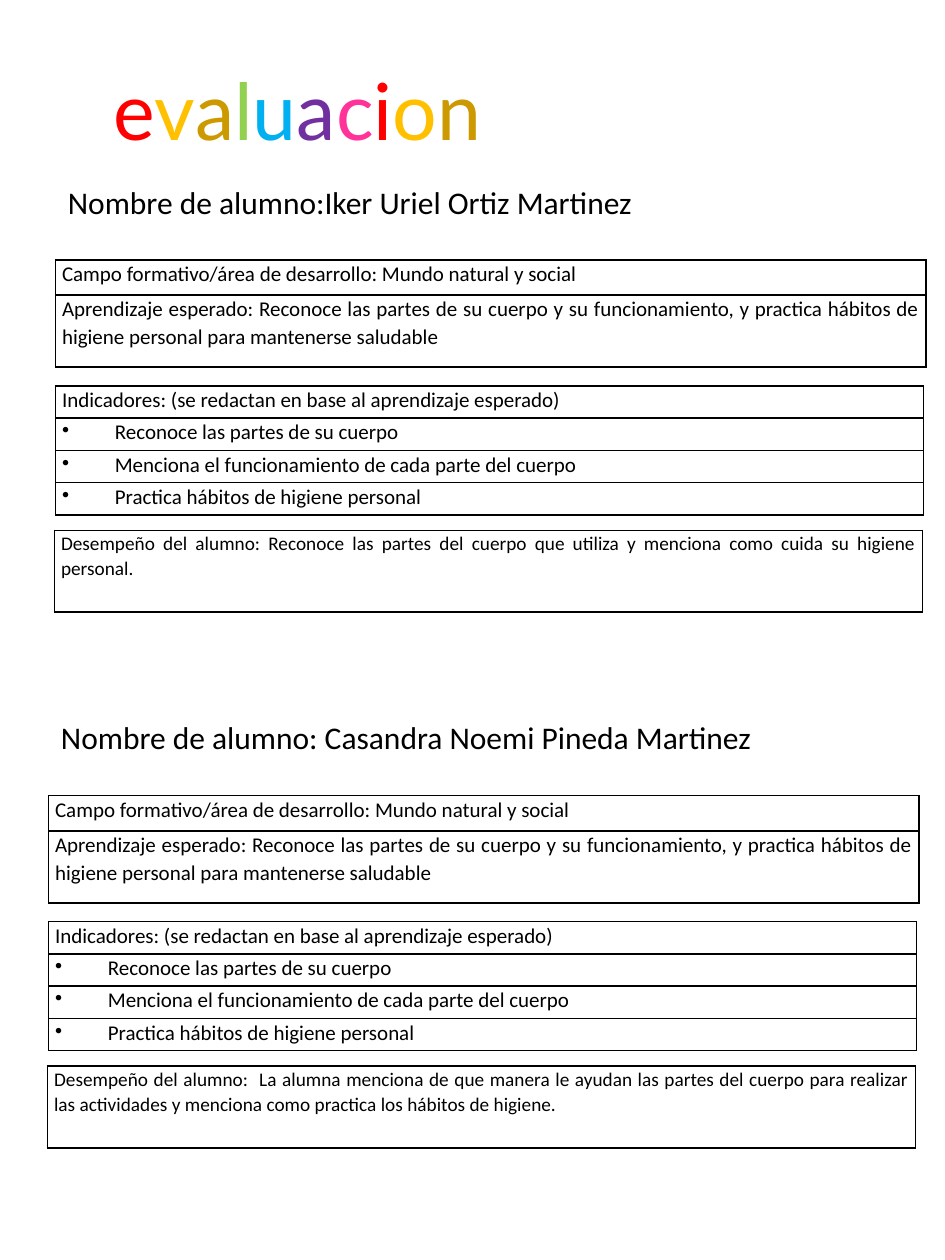
"""Build a student evaluation sheet with one block of tables per student."""
import pptx
import pptx.dml.color
import pptx.enum.text
import pptx.oxml
import pptx.oxml.ns
import pptx.util
from pptx.util import Cm, Pt

RED = pptx.dml.color.RGBColor(0xFF, 0x00, 0x00)
AMBER = pptx.dml.color.RGBColor(0xFF, 0xC0, 0x00)
OCHRE = pptx.dml.color.RGBColor(0xCC, 0x99, 0x00)
GREEN = pptx.dml.color.RGBColor(0x92, 0xD0, 0x50)
BLUE = pptx.dml.color.RGBColor(0x00, 0xB0, 0xF0)
PURPLE = pptx.dml.color.RGBColor(0x70, 0x30, 0xA0)
PINK = pptx.dml.color.RGBColor(0xFF, 0x33, 0x99)
BLACK = pptx.dml.color.RGBColor(0x00, 0x00, 0x00)

TITLE = "evaluacion"
TITLE_COLOURS = [RED, AMBER, OCHRE, GREEN, BLUE, PURPLE, PINK, RED, AMBER, OCHRE]
FIELD_ROWS = [
    "Campo formativo/área de desarrollo: Mundo natural y social",
    "Aprendizaje esperado: Reconoce las partes de su cuerpo y su funcionamiento, "
    "y practica hábitos de higiene personal para mantenerse saludable",
]
INDICATOR_ROWS = [
    "Indicadores: (se redactan en base al aprendizaje esperado)",
    "• Reconoce las partes de su cuerpo",
    "• Menciona el funcionamiento de cada parte del cuerpo",
    "• Practica hábitos de higiene personal",
]
STUDENTS = [
    (1.12, 3.56, 12.01, "Nombre de alumno:Iker Uriel Ortiz Martinez",
     "Desempeño del alumno: Reconoce las partes del cuerpo que utiliza y menciona "
     "como cuida su higiene personal."),
    (0.98, 14.36, 14.61, "Nombre de alumno: Casandra Noemi Pineda Martinez",
     "Desempeño del alumno:  La alumna menciona de que manera le ayudan las partes "
     "del cuerpo para realizar las actividades y menciona como practica los hábitos "
     "de higiene."),
]


def format_run(run, font_name, size, colour):
    run.font.name = font_name
    run.font.size = Pt(size)
    run.font.color.rgb = colour


def add_text_table(slide, left, top, width, heights, texts, size):
    shape = slide.shapes.add_table(
        len(texts), 1, Cm(left), Cm(top), Cm(width), Cm(sum(heights)))
    table = shape.table
    table.first_row = False
    table.horz_banding = False
    for row, height, text in zip(table.rows, heights, texts):
        row.height = Cm(height)
        cell = row.cells[0]
        cell.margin_left = cell.margin_right = Cm(0.13)
        cell.margin_top = cell.margin_bottom = 0
        cell_properties = cell._tc.get_or_add_tcPr()
        for side in ("lnL", "lnR", "lnT", "lnB"):
            cell_properties.append(pptx.oxml.parse_xml(
                f'<a:{side} {pptx.oxml.ns.nsdecls("a")} w="12700"><a:solidFill>'
                f'<a:srgbClr val="{BLACK}"/></a:solidFill></a:{side}>'))
        cell.fill.background()
        paragraph = cell.text_frame.paragraphs[0]
        paragraph.text = text.replace("• ", "\u00a0")
        paragraph.alignment = pptx.enum.text.PP_ALIGN.JUSTIFY
        paragraph.line_spacing = 1.07
        if text.startswith("•"):
            paragraph_properties = paragraph._p.get_or_add_pPr()
            paragraph_properties.set("marL", str(Cm(0.97)))
            paragraph_properties.set("indent", str(-Cm(0.97)))
            paragraph_properties.append(pptx.oxml.parse_xml(
                f'<a:buChar {pptx.oxml.ns.nsdecls("a")} char="•"/>'))
        format_run(paragraph.runs[0], "Calibri", size, BLACK)


presentation = pptx.Presentation()
presentation.slide_width = Cm(19.05)
presentation.slide_height = Cm(25.4)
slide = presentation.slides.add_slide(presentation.slide_layouts[6])

title_box = slide.shapes.add_textbox(Cm(2.03), Cm(1.12), Cm(17.02), Cm(2.18))
title_box.text_frame.word_wrap = True
title_box.text_frame.auto_size = pptx.enum.text.MSO_AUTO_SIZE.SHAPE_TO_FIT_TEXT
for letter, colour in zip(TITLE, TITLE_COLOURS):
    run = title_box.text_frame.paragraphs[0].add_run()
    run.text = letter
    format_run(run, "Lato", 45, colour)

for left, top, name_width, name, performance in STUDENTS:
    name_box = slide.shapes.add_textbox(Cm(left), Cm(top), Cm(name_width), Cm(1.02))
    name_box.text_frame.word_wrap = False
    name_box.text_frame.auto_size = pptx.enum.text.MSO_AUTO_SIZE.SHAPE_TO_FIT_TEXT
    name_box.text_frame.text = name
    format_run(name_box.text_frame.paragraphs[0].runs[0], "Calibri", 18, BLACK)

    add_text_table(slide, left, top + 1.68, 17.55, [0.71, 1.45], FIELD_ROWS, 12)
    add_text_table(slide, left, top + 4.22, 17.5, [0.65] * 4, INDICATOR_ROWS, 12)
    add_text_table(slide, left - 0.02, top + 7.13, 17.5, [1.65], [performance], 11)

presentation.save("out.pptx")
